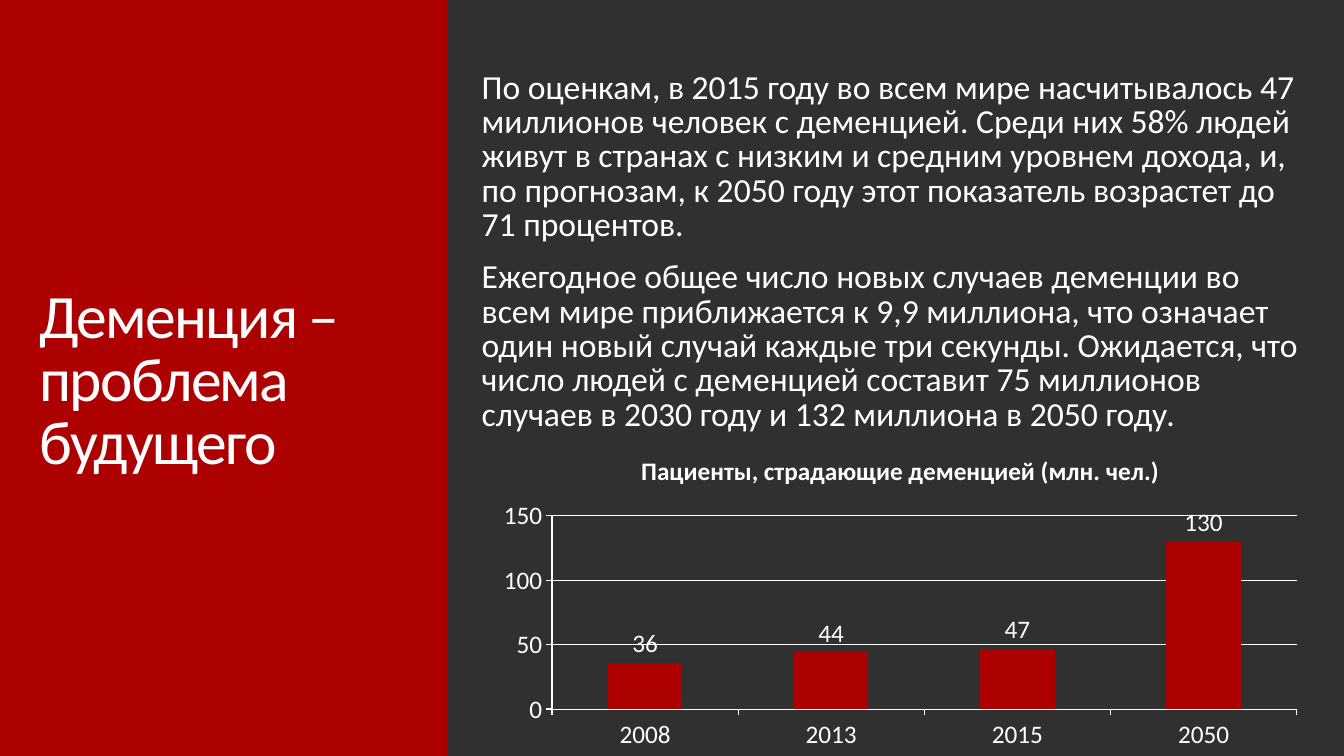
"""Builds a slide about the growing number of people with dementia."""
from dataclasses import dataclass

import pptx
import pptx.chart.data
import pptx.dml.color
import pptx.enum.chart
import pptx.enum.shapes
import pptx.enum.text
import pptx.util

Pt = pptx.util.Pt
RGB = pptx.dml.color.RGBColor.from_string


@dataclass(frozen=True)
class Theme:
    """Colours, font and type sizes of the deck."""
    background: str = "303030"
    accent: str = "AD0101"
    text: str = "FFFFFF"
    font: str = "Calibri"
    title_size: float = 44
    body_size: float = 24
    chart_size: float = 18
    line_spacing: float = 0.85
    paragraph_gap: float = 13
    title_tracking: float = -1.2


class SlideBuilder:
    """Draws styled elements on one page."""

    def __init__(self, page, theme):
        self.page = page
        self.theme = theme
        page.background.fill.solid()
        page.background.fill.fore_color.rgb = RGB(theme.background)

    def style_font(self, font, size):
        """Apply the theme's font and text colour."""
        font.name = self.theme.font
        font.size = Pt(size)
        font.color.rgb = RGB(self.theme.text)

    def panel(self, left, top, width, height):
        """Add a plain accent rectangle."""
        panel = self.page.shapes.add_shape(
            pptx.enum.shapes.MSO_SHAPE.RECTANGLE, Pt(left), Pt(top), Pt(width), Pt(height))
        panel.shadow.inherit = False
        panel.fill.solid()
        panel.fill.fore_color.rgb = RGB(self.theme.accent)
        panel.line.fill.background()

    def text(self, left, top, width, height, paragraphs, size, tracking=0):
        """Add a vertically centred text box."""
        box = self.page.shapes.add_textbox(Pt(left), Pt(top), Pt(width), Pt(height))
        frame = box.text_frame
        frame.word_wrap = True
        frame.vertical_anchor = pptx.enum.text.MSO_ANCHOR.MIDDLE
        for index, content in enumerate(paragraphs):
            para = frame.add_paragraph() if index else frame.paragraphs[0]
            span = para.add_run()
            span.text = content
            para.line_spacing = self.theme.line_spacing
            if index:
                para.space_before = Pt(self.theme.paragraph_gap)
            self.style_font(para.font, size)
            if tracking:
                span.font._element.set("spc", str(round(tracking * 100)))

    def white_line(self, line, width):
        """Colour a chart line."""
        line.color.rgb = RGB(self.theme.text)
        line.width = Pt(width)

    def column_chart(self, left, top, width, height, title, values, maximum, step):
        """Add a titled column chart with value labels."""
        data = pptx.chart.data.CategoryChartData()
        data.categories = list(values)
        data.add_series(title, list(values.values()))
        chart = self.page.shapes.add_chart(
            pptx.enum.chart.XL_CHART_TYPE.COLUMN_CLUSTERED,
            Pt(left), Pt(top), Pt(width), Pt(height), data).chart
        self.style_font(chart.font, self.theme.chart_size)
        chart.has_legend = False

        chart.has_title = True
        chart.chart_title.include_in_layout = False
        heading = chart.chart_title.text_frame
        heading.text = title
        self.style_font(heading.paragraphs[0].font, self.theme.chart_size)
        heading.paragraphs[0].font.bold = True

        for axis, line_width in ((chart.category_axis, 0.75), (chart.value_axis, 1)):
            axis.major_tick_mark = pptx.enum.chart.XL_TICK_MARK.OUTSIDE
            axis.minor_tick_mark = pptx.enum.chart.XL_TICK_MARK.NONE
            self.white_line(axis.format.line, line_width)
            self.style_font(axis.tick_labels.font, self.theme.chart_size)
        chart.value_axis.minimum_scale = 0
        chart.value_axis.maximum_scale = maximum
        chart.value_axis.major_unit = step
        chart.value_axis.has_major_gridlines = True
        self.white_line(chart.value_axis.major_gridlines.format.line, 0.75)

        plot = chart.plots[0]
        plot.gap_width = 150
        plot.vary_by_categories = False
        plot.has_data_labels = True
        labels = plot.data_labels
        labels.show_value = True
        labels.position = pptx.enum.chart.XL_LABEL_POSITION.OUTSIDE_END
        self.style_font(labels.font, self.theme.chart_size)
        fill = plot.series[0].format.fill
        fill.solid()
        fill.fore_color.rgb = RGB(self.theme.accent)


def main():
    """Build and save the deck."""
    theme = Theme()
    deck = pptx.Presentation()
    deck.slide_width, deck.slide_height = Pt(960), Pt(540)
    slide = SlideBuilder(deck.slides.add_slide(deck.slide_layouts[6]), theme)

    slide.panel(0, 0, 319.5, 540)
    slide.text(21, 35, 294, 476.5, ["Деменция – проблема будущего"],
               theme.title_size, theme.title_tracking)
    slide.text(337, 13.5, 608.5, 333.5, [
        "По оценкам, в 2015 году во всем мире насчитывалось 47 миллионов человек "
        "с деменцией. Среди них 58% людей живут в странах с низким и средним уровнем "
        "дохода, и, по прогнозам, к 2050 году этот показатель возрастет до 71 процентов.",
        "Ежегодное общее число новых случаев деменции во всем мире приближается "
        "к 9,9 миллиона, что означает один новый случай каждые три секунды. Ожидается, "
        "что число людей с деменцией составит 75 миллионов случаев в 2030 году "
        "и 132 миллиона в 2050 году.",
    ], theme.body_size)
    slide.column_chart(348, 312, 590, 228, "Пациенты, страдающие деменцией (млн. чел.)",
                       {"2008": 36, "2013": 44, "2015": 47, "2050": 130},
                       maximum=150, step=50)
    deck.save("out.pptx")


if __name__ == "__main__":
    main()
